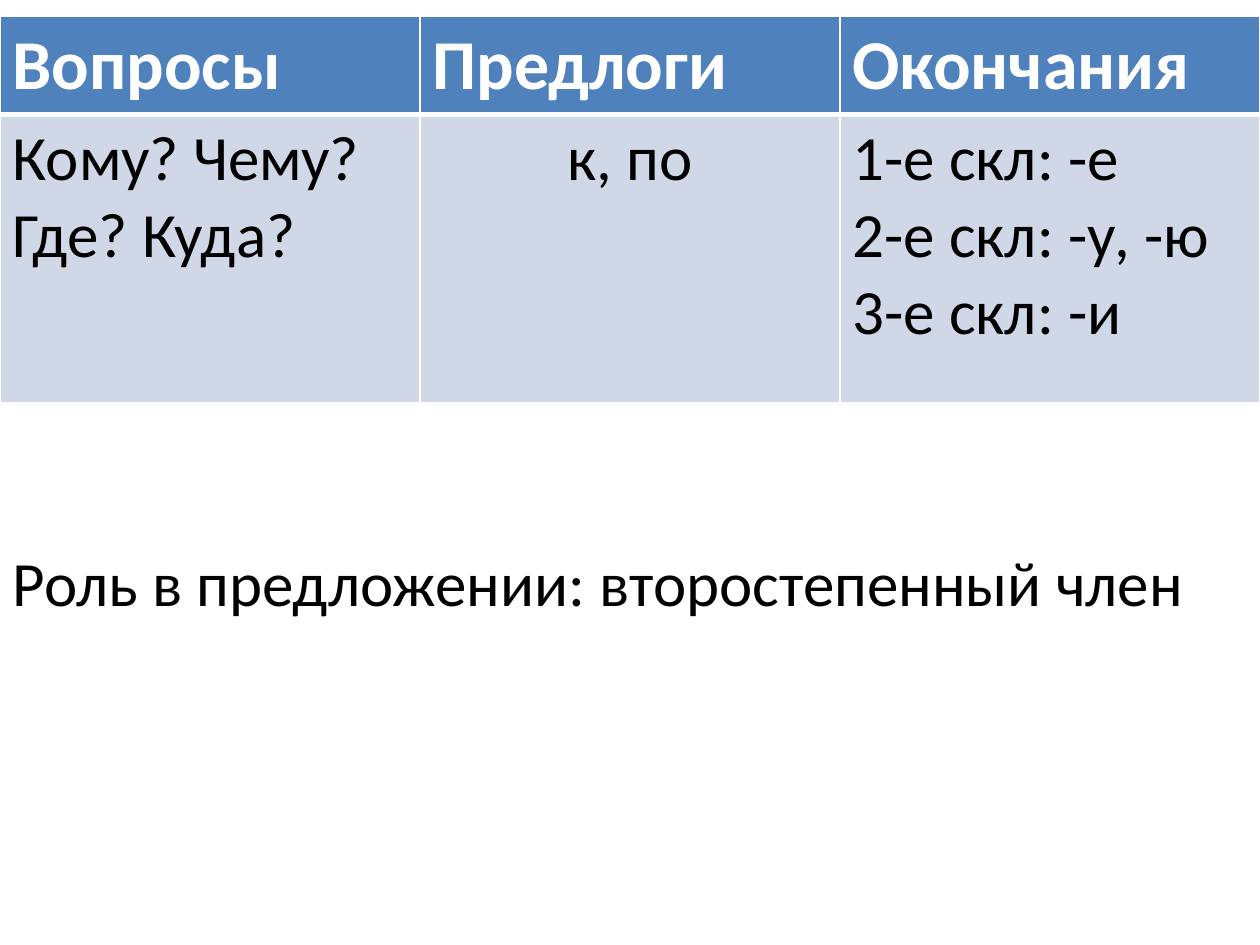
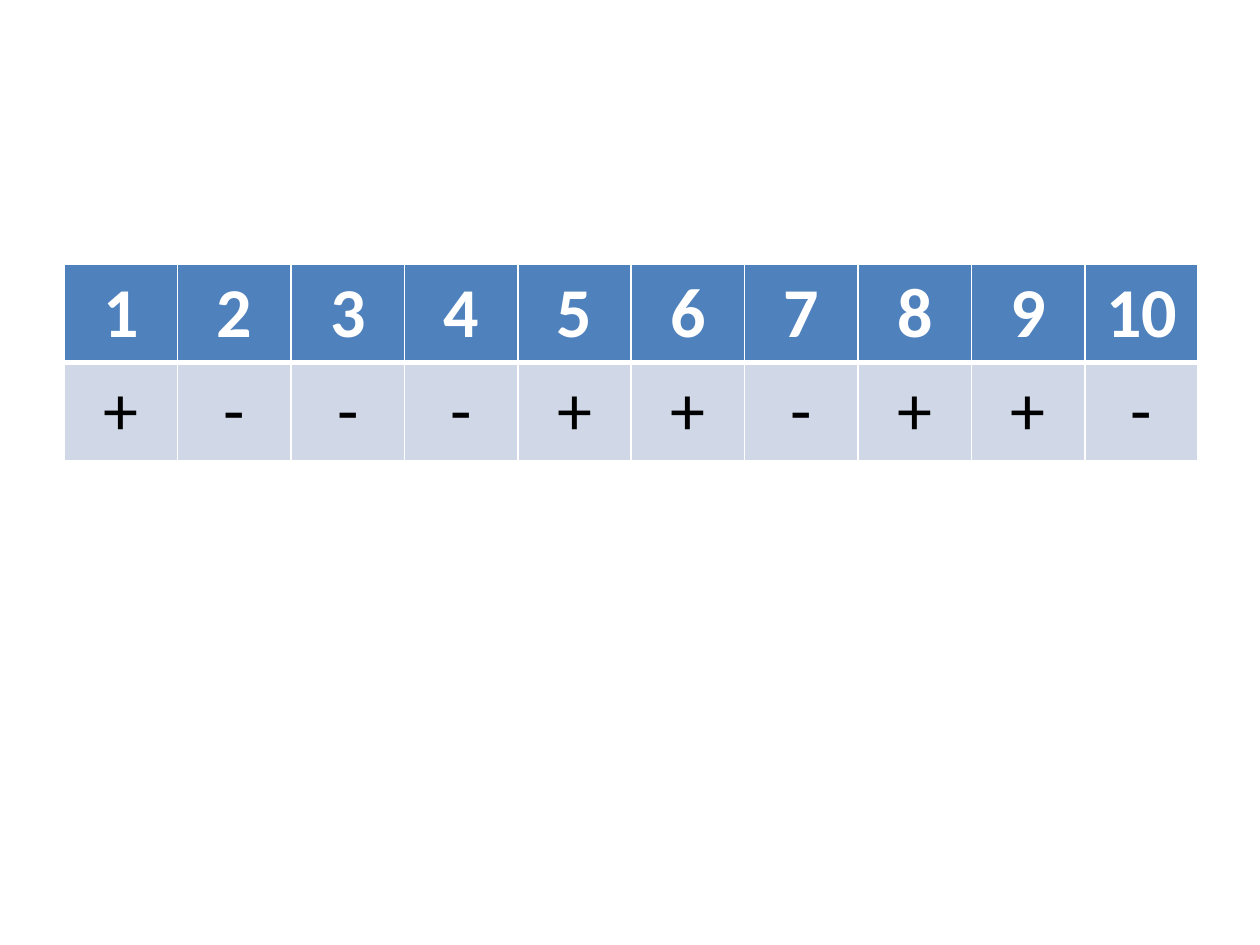
"""Build two grammar slides with tables that share one style."""
from dataclasses import dataclass

from lxml.etree import SubElement
from pptx import Presentation
from pptx.dml.color import RGBColor
from pptx.enum.text import MSO_ANCHOR, PP_ALIGN as Align
from pptx.oxml.ns import qn
from pptx.slide import Slide
from pptx.table import _Cell as Cell
from pptx.text.text import TextFrame
from pptx.util import Inches, Pt

FONT = "Calibri"
WHITE = "FFFFFF"
BLACK = "000000"
HEADER_BLUE = "4F81BD"
BODY_BLUE = "D0D8E8"
HEADER_HEIGHT = 0.77
TITLE_ONLY, BLANK = 5, 6


@dataclass(frozen=True)
class TextStyle:
    size: int
    color: str
    bold: bool = False


@dataclass(frozen=True)
class RowStyle:
    text: TextStyle
    fill: str
    borders: dict[str, int]


@dataclass(frozen=True)
class TableRow:
    texts: list[str]
    alignments: list[Align]
    height: float
    style: RowStyle


@dataclass(frozen=True)
class TableSpec:
    left: float
    top: float
    width: float
    rows: list[TableRow]


def header_style(size: int) -> RowStyle:
    return RowStyle(TextStyle(size, WHITE, True), HEADER_BLUE,
                    {"L": 1, "R": 1, "T": 1, "B": 3})


def body_style(size: int) -> RowStyle:
    return RowStyle(TextStyle(size, BLACK), BODY_BLUE,
                    {"L": 1, "R": 1, "T": 3, "B": 1})


def rgb(color: str) -> RGBColor:
    return RGBColor.from_string(color)


def write_text(frame: TextFrame, text: str, style: TextStyle, alignment: Align) -> None:
    for index, line in enumerate(text.split("\n")):
        paragraph = frame.add_paragraph() if index else frame.paragraphs[0]
        paragraph.alignment = alignment
        run = paragraph.add_run()
        run.text = line
        run.font.name = FONT
        run.font.size = Pt(style.size)
        run.font.bold = style.bold
        run.font.color.rgb = rgb(style.color)


def set_borders(cell: Cell, borders: dict[str, int]) -> None:
    properties = cell._tc.get_or_add_tcPr()
    for side, width in borders.items():
        line = SubElement(properties, qn(f"a:ln{side}"), w=str(Pt(width)))
        fill = SubElement(line, qn("a:solidFill"))
        SubElement(fill, qn("a:srgbClr"), val=WHITE)


def add_table(slide: Slide, spec: TableSpec) -> None:
    column_count = len(spec.rows[0].texts)
    height = sum(row.height for row in spec.rows)
    table = slide.shapes.add_table(
        len(spec.rows), column_count, Inches(spec.left), Inches(spec.top),
        Inches(spec.width), Inches(height)).table
    for column in table.columns:
        column.width = Inches(spec.width / column_count)
    for row_index, row in enumerate(spec.rows):
        table.rows[row_index].height = Inches(row.height)
        for column_index, (text, alignment) in enumerate(zip(row.texts, row.alignments)):
            cell = table.cell(row_index, column_index)
            set_borders(cell, row.style.borders)
            cell.fill.solid()
            cell.fill.fore_color.rgb = rgb(row.style.fill)
            write_text(cell.text_frame, text, row.style.text, alignment)


def add_case_slide(presentation: Presentation) -> None:
    slide = presentation.slides.add_slide(presentation.slide_layouts[TITLE_ONLY])
    title = slide.shapes.title
    title.left, title.top = Inches(0), Inches(3.2)
    title.width, title.height = Inches(10), Inches(2.83)
    title.text_frame.vertical_anchor = MSO_ANCHOR.MIDDLE
    write_text(title.text_frame, "Роль в предложении: второстепенный член",
               TextStyle(36, BLACK), Align.LEFT)
    headings = TableRow(["Вопросы", "Предлоги", "Окончания"], [Align.LEFT] * 3,
                        HEADER_HEIGHT, header_style(40))
    details = TableRow(
        ["Кому? Чему?\nГде? Куда?", "к, по",
         "1-е скл: -е\n2-е скл: -у, -ю\n3-е скл: -и"],
        [Align.LEFT, Align.CENTER, Align.LEFT], 2.29, body_style(36))
    add_table(slide, TableSpec(0, 0.13, 10, [headings, details]))


def add_answer_slide(presentation: Presentation) -> None:
    slide = presentation.slides.add_slide(presentation.slide_layouts[BLANK])
    answers = list("+---++-++-")
    numbers = [str(number) for number in range(1, len(answers) + 1)]
    centred = [Align.CENTER] * len(answers)
    add_table(slide, TableSpec(0.51, 2.1, 9, [
        TableRow(numbers, centred, HEADER_HEIGHT, header_style(40)),
        TableRow(answers, centred, HEADER_HEIGHT, body_style(40)),
    ]))


def main() -> None:
    presentation = Presentation()
    presentation.slide_width, presentation.slide_height = Inches(10), Inches(7.5)
    add_case_slide(presentation)
    add_answer_slide(presentation)
    presentation.save("out.pptx")


if __name__ == "__main__":
    main()
